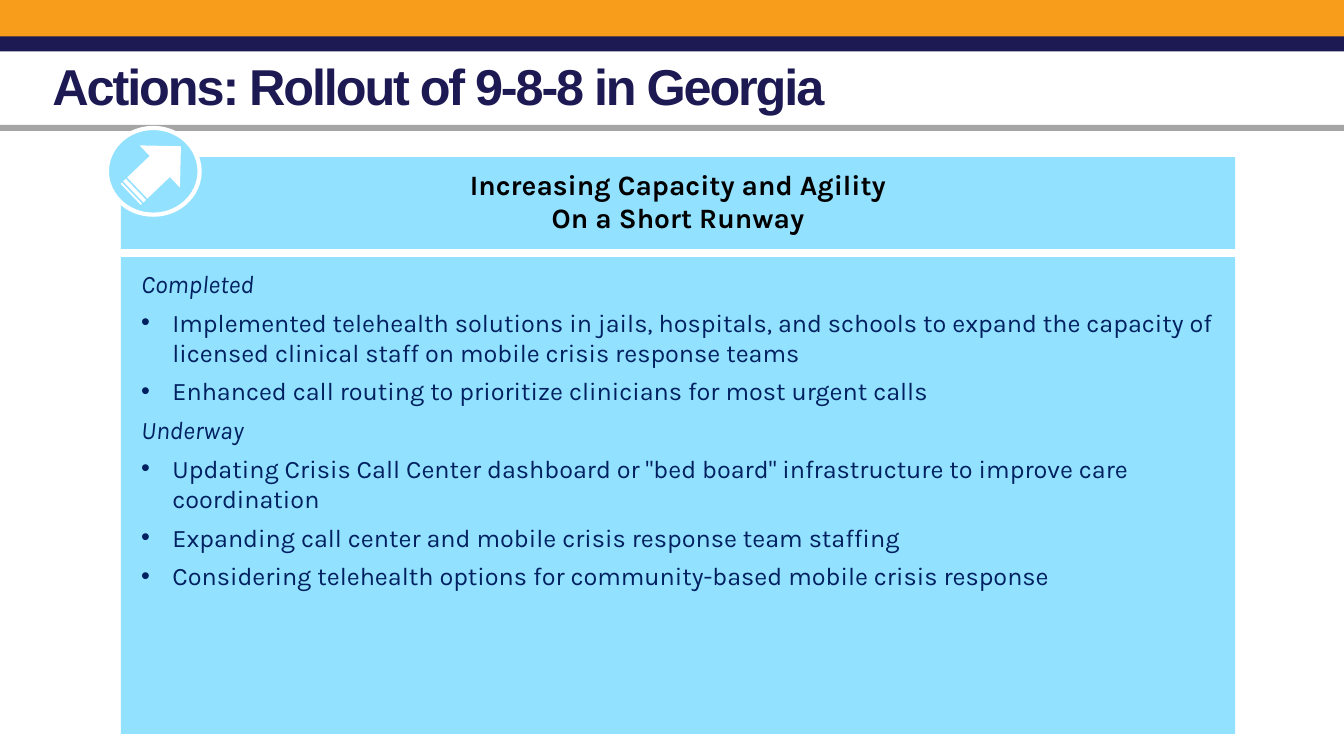
from pptx import Presentation
from pptx import util as u
from pptx.dml.color import RGBColor
from pptx.enum import shapes, text
from pptx.oxml.ns import qn
from lxml import etree

WIDTH, HEIGHT = 13.33, 7.5
NAVY, SKY, WHITE, INK = "1D1953", "92E1FF", "FFFFFF", "002060"
TITLE = "Actions: Rollout of 9-8-8 in Georgia"
BANDS = [(0, 0.4, "F89C1B"), (0.36, 0.15, NAVY), (1.24, 0.06, "A5A5A5")]
HEADING = ["Increasing Capacity and Agility", "On a Short Runway"]
SECTIONS = {
    "Completed": [
        "Implemented telehealth solutions in jails, hospitals, and schools to expand the capacity of "
        "licensed clinical staff on mobile crisis response teams",
        "Enhanced call routing to prioritize clinicians for most urgent calls",
    ],
    "Underway": [
        "Updating Crisis Call Center dashboard or \"bed board\" infrastructure to improve care coordination",
        "Expanding call center and mobile crisis response team staffing",
        "Considering telehealth options for community-based mobile crisis response",
    ],
}
PANEL = (1.2, 1.56, 11.05, 5.72)
DIVIDER_Y = 2.51
BADGE = (1.06, 1.27, 0.92, 0.86)
ARROW = (1.2, 1.4, 0.69, 0.58)
INDENT = 0.31

prs = Presentation()
prs.slide_width, prs.slide_height = u.Inches(WIDTH), u.Inches(HEIGHT)
slide = prs.slides.add_slide(prs.slide_layouts[5])


def color(value):
    return RGBColor.from_string(value)


def add_block(kind, box, fill):
    block = slide.shapes.add_shape(kind, *map(u.Inches, box))
    block.shadow.inherit = False
    block.fill.solid()
    block.fill.fore_color.rgb = color(fill)
    block.line.fill.background()
    return block


def add_run(paragraph, words, size, face, ink, bold=False, italic=False):
    run = paragraph.add_run()
    run.text = words
    font = run.font
    font.size, font.name, font.bold, font.italic = u.Pt(size), face, bold, italic
    font.color.rgb = color(ink)
    return run


def add_bullet(paragraph):
    props = paragraph._p.get_or_add_pPr()
    props.set("marL", str(u.Inches(INDENT)))
    props.set("indent", str(-u.Inches(INDENT)))
    etree.SubElement(props, qn("a:buFont")).set("typeface", "Arial")
    etree.SubElement(props, qn("a:buChar")).set("char", "•")


for top, height, fill in BANDS:
    add_block(shapes.MSO_SHAPE.RECTANGLE, (0, top, WIDTH, height), fill)

title = slide.shapes.title
title.left, title.top, title.width, title.height = map(u.Inches, (0.42, 0.16, 11.47, 1.45))
title_frame = title.text_frame
title_frame.word_wrap = True
title_frame.auto_size = text.MSO_AUTO_SIZE.NONE
title_frame.vertical_anchor = text.MSO_ANCHOR.MIDDLE
headline = title_frame.paragraphs[0]
headline.alignment = text.PP_ALIGN.LEFT
headline.line_spacing = 0.9
title_run = add_run(headline, TITLE, 36, "Arial", NAVY, bold=True)
title_run.font._element.set("spc", "-150")

panel = add_block(shapes.MSO_SHAPE.RECTANGLE, PANEL, SKY)
frame = panel.text_frame
frame.word_wrap = True
frame.vertical_anchor = text.MSO_ANCHOR.TOP
frame.margin_left = frame.margin_right = u.Inches(0.2)
frame.margin_top, frame.margin_bottom = u.Inches(0.1), u.Inches(0.05)

for index, words in enumerate(HEADING):
    heading = frame.add_paragraph() if index else frame.paragraphs[0]
    heading.alignment = text.PP_ALIGN.CENTER
    add_run(heading, words, 20, "Karla", "000000", bold=True)
heading.space_after = u.Pt(24)

for status, actions in SECTIONS.items():
    for words in [status] + actions:
        entry = frame.add_paragraph()
        entry.alignment = text.PP_ALIGN.LEFT
        entry.space_after = u.Pt(6)
        if words != status:
            add_bullet(entry)
        add_run(entry, words, 18, "Karla", INK, italic=words == status)

divider = slide.shapes.add_connector(
    shapes.MSO_CONNECTOR.STRAIGHT, *map(u.Inches, (0.72, DIVIDER_Y, WIDTH, DIVIDER_Y)))
divider.line.color.rgb = color(WHITE)
divider.line.width = u.Pt(5.25)
etree.SubElement(divider._element.spPr, qn("a:effectLst"))

badge = add_block(shapes.MSO_SHAPE.OVAL, BADGE, SKY)
badge.line.color.rgb = color(WHITE)
badge.line.width = u.Pt(3)
arrow = add_block(shapes.MSO_SHAPE.STRIPED_RIGHT_ARROW, ARROW, WHITE)
arrow.rotation = 316.3

prs.save("out.pptx")
